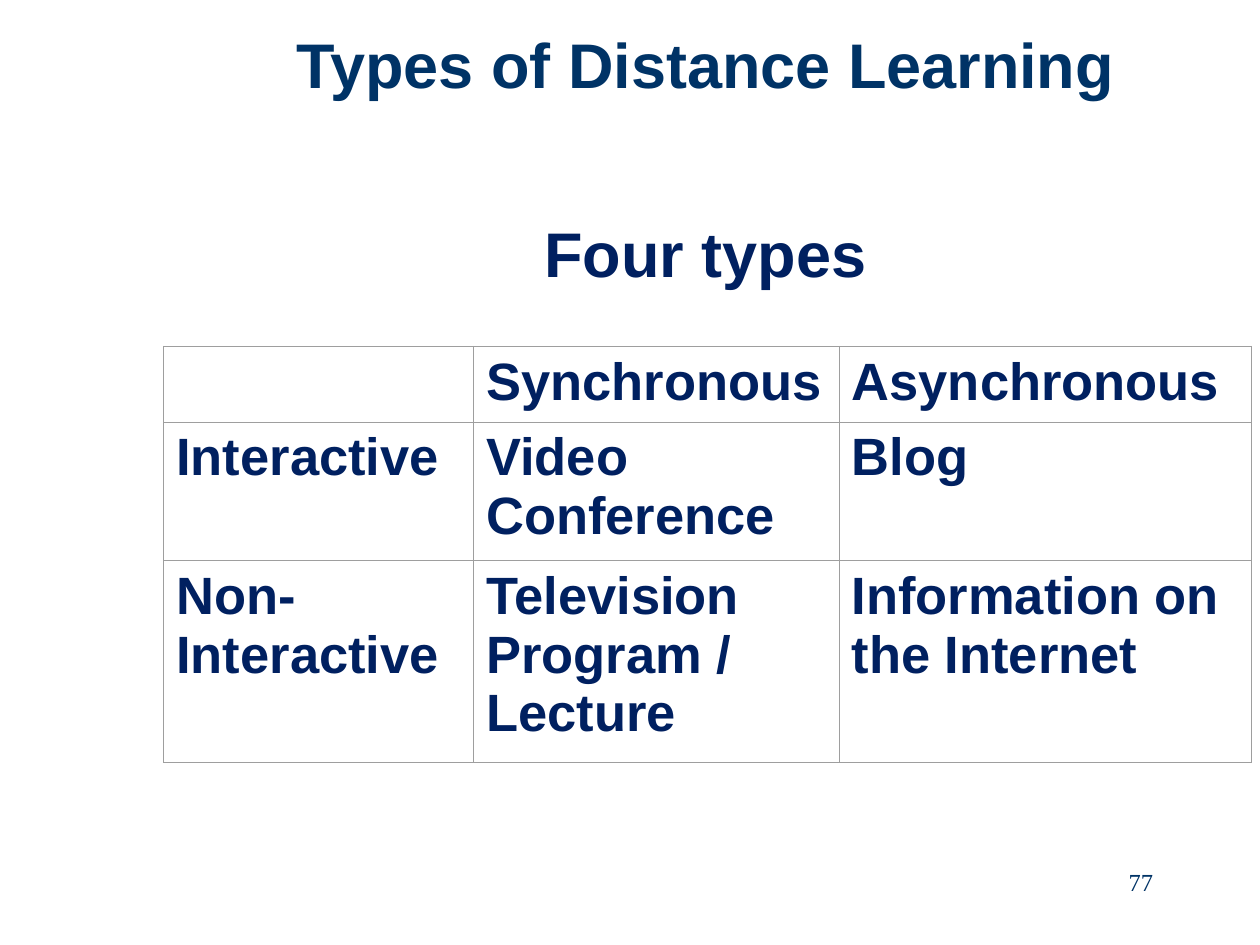
from lxml import etree
from pptx import Presentation
from pptx.dml.color import RGBColor
from pptx.enum import text as t
from pptx.oxml import ns
from pptx.util import Inches, Pt

TEAL = RGBColor(0x00, 0x33, 0x66)
NAVY = RGBColor(0x00, 0x20, 0x60)
GREY = RGBColor(0x9E, 0x9E, 0x9E)

COLS = [2.46, 2.9, 3.27]
ROWS = [0.56, 1.03, 1.49]
TYPES = [
    ["", "Synchronous", "Asynchronous"],
    ["Interactive", "Video Conference", "Blog"],
    ["Non-Interactive", "Television Program / Lecture", "Information on the Internet"],
]


def style(para, size, color, face="Arial", bold=True):
    font = para.font
    font.name, font.size, font.bold = face, Pt(size), bold
    font.color.rgb = color


def add_text(slide, words, box, align, anchor=t.MSO_ANCHOR.TOP, top=0.05):
    frame = slide.shapes.add_textbox(*map(Inches, box)).text_frame
    frame.word_wrap = True
    frame.vertical_anchor = anchor
    frame.margin_top = Inches(top)
    para = frame.paragraphs[0]
    para.text = words
    para.alignment = align
    return para


def add_border(cell):
    props = cell._tc.get_or_add_tcPr()
    for index, side in enumerate(("lnL", "lnR", "lnT", "lnB")):
        line = etree.Element(ns.qn("a:" + side), w=str(Pt(0.75)))
        fill = etree.SubElement(line, ns.qn("a:solidFill"))
        etree.SubElement(fill, ns.qn("a:srgbClr"), val=str(GREY))
        props.insert(index, line)


def add_grid(slide, left, top):
    table = slide.shapes.add_table(
        len(ROWS), len(COLS), Inches(left), Inches(top),
        Inches(sum(COLS)), Inches(sum(ROWS))).table
    table.first_row = table.horz_banding = False
    for col, width in zip(table.columns, COLS):
        col.width = Inches(width)
    for row, height, words in zip(table.rows, ROWS, TYPES):
        row.height = Inches(height)
        for cell, word in zip(row.cells, words):
            cell.fill.background()
            add_border(cell)
            cell.text = word
            style(cell.text_frame.paragraphs[0], 30, NAVY)


def main():
    deck = Presentation()
    deck.slide_width, deck.slide_height = Inches(10), Inches(7.5)
    slide = deck.slides.add_slide(deck.slide_layouts[6])
    mid, right = t.PP_ALIGN.CENTER, t.PP_ALIGN.RIGHT
    title = add_text(slide, "Types of Distance Learning", (1.6, 0, 8, 1),
                     mid, t.MSO_ANCHOR.MIDDLE)
    style(title, 36, TEAL)
    lead = add_text(slide, "Four types", (1.6, 1.6, 8, 5), mid, top=0.1)
    style(lead, 36, NAVY)
    number = add_text(slide, "77", (7.17, 6.83, 2.08, 0.5), right)
    style(number, 14, TEAL, "Times New Roman", False)
    add_grid(slide, 1.3, 2.75)
    deck.save("out.pptx")


if __name__ == "__main__":
    main()
